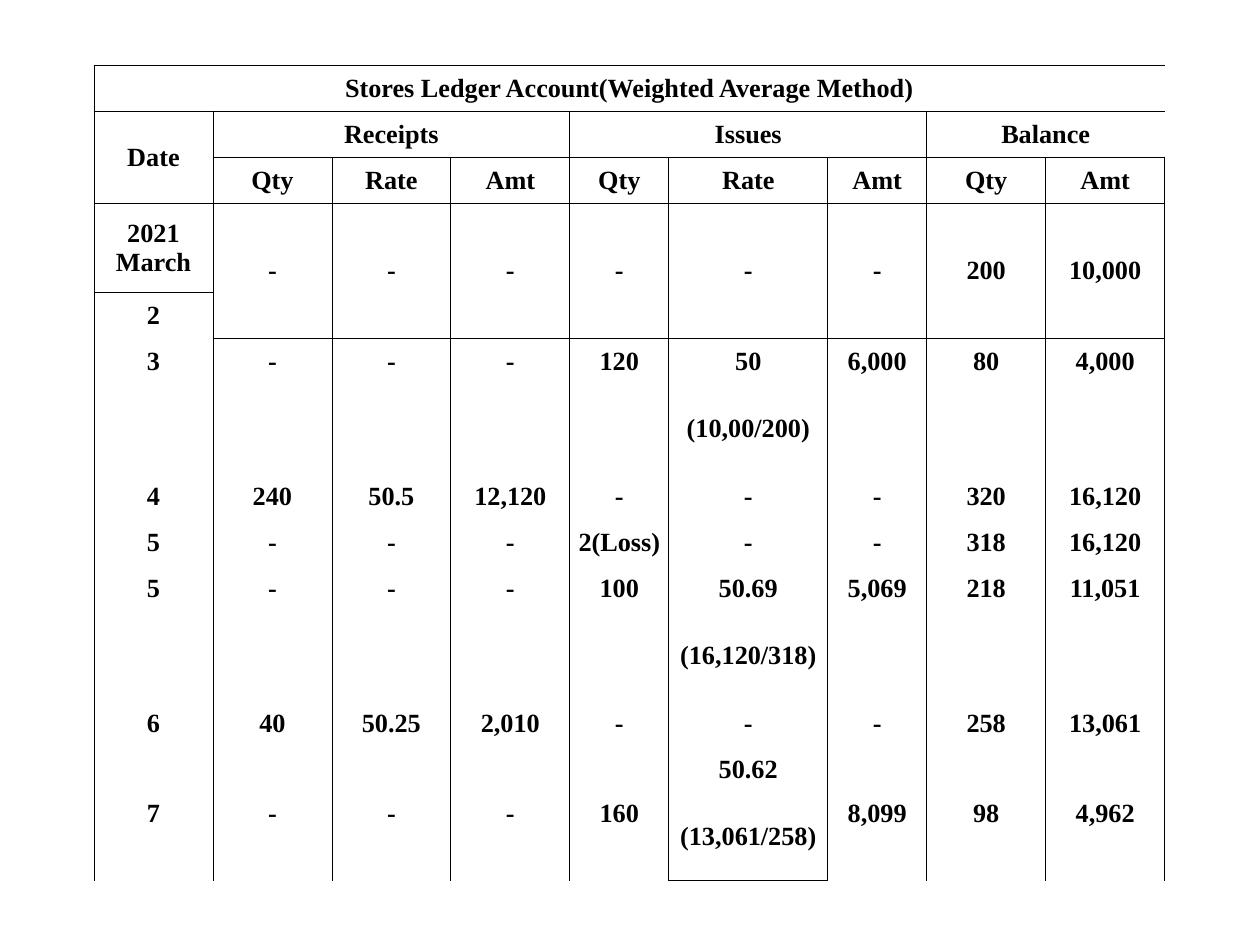
from lxml import etree
from pptx import Presentation, util as u
from pptx.dml.color import RGBColor
from pptx.enum import text
from pptx.oxml.ns import qn

PX = 914400 // 126
BLACK = "000000"
FONT = "Times New Roman"
NO_STYLE = "{2D5ABB26-0587-4C30-8999-92F81FD0307C}"

# Ledger contents; blank entries are empty or covered by a merged cell
LEDGER = [
    ["Stores Ledger Account(Weighted Average Method)"] + [""] * 8,
    ["Date", "Receipts", "", "", "Issues", "", "", "Balance", ""],
    ["", "Qty", "Rate", "Amt", "Qty", "Rate", "Amt", "Qty", "Amt"],
    ["2021 March", "-", "-", "-", "-", "-", "-", "200", "10,000"],
    ["2"] + [""] * 8,
    ["3", "-", "-", "-", "120", "50", "6,000", "80", "4,000"],
    ["", "", "", "", "", "(10,00/200)", "", "", ""],
    ["4", "240", "50.5", "12,120", "-", "-", "-", "320", "16,120"],
    ["5", "-", "-", "-", "2(Loss)", "-", "-", "318", "16,120"],
    ["5", "-", "-", "-", "100", "50.69", "5,069", "218", "11,051"],
    ["", "", "", "", "", "(16,120/318)", "", "", ""],
    ["6", "40", "50.25", "2,010", "-", "-", "-", "258", "13,061"],
    ["7", "-", "-", "-", "160", "50.62", "8,099", "98", "4,962"],
    ["", "", "", "", "", "(13,061/258)", "", "", ""],
]
HEADER_ROWS = 3
COL_WIDTHS = [119, 119, 119, 119, 99, 159, 99, 119, 119]
TALL_ROWS = {3, 6, 10, 13}
ROW_HEIGHTS = [89 if r in TALL_ROWS else 46 for r in range(len(LEDGER))]

# Merged areas: first row, first column, last row, last column
MERGES = [(0, 0, 0, 8), (1, 0, 2, 0), (1, 1, 1, 3), (1, 4, 1, 6), (1, 7, 1, 8)]
MERGES += [(3, c, 4, c) for c in range(1, 9)]
MERGES += [(12, c, 13, c) for c in range(9) if c != 5]


def px(n):
    return u.Emu(n * PX)


def rgb(color):
    return RGBColor.from_string(color)


def write(cell, words, size=15, bold=True, color=BLACK, font=FONT):
    """Centre the words in the cell."""
    cell.vertical_anchor = text.MSO_ANCHOR.MIDDLE
    cell.margin_left = cell.margin_right = cell.margin_top = u.Inches(0.01)
    cell.margin_bottom = 0
    if not words:
        return
    p = cell.text_frame.paragraphs[0]
    p.alignment = text.PP_ALIGN.CENTER
    r = p.add_run()
    r.text = words
    r.font.size, r.font.bold, r.font.name = u.Pt(size), bold, font
    r.font.color.rgb = rgb(color)


def draw_borders(cell, sides, color=BLACK, width=0.5):
    """Rule the listed sides, given in the order L, R, T, B."""
    tc_pr = cell._tc.get_or_add_tcPr()
    for side in sides:
        ln = etree.SubElement(tc_pr, qn("a:ln" + side), w=str(u.Pt(width)))
        fill = etree.SubElement(ln, qn("a:solidFill"))
        etree.SubElement(fill, qn("a:srgbClr"), val=color)


def ruled_sides(row, col):
    """Sides of a cell on a ruled edge, leaving out edges inside a merge."""
    area = next((m for m in MERGES
                 if m[0] <= row <= m[2] and m[1] <= col <= m[3]),
                (row, col, row, col))
    top, left, bottom, right = area
    edges = {
        "L": col == left,
        "R": col == right,
        "T": row == top and row <= HEADER_ROWS,
        "B": row == bottom and (row < HEADER_ROWS or row == len(LEDGER) - 1),
    }
    return [side for side, ruled in edges.items() if ruled]


def add_ledger(slide, x, y):
    frame = slide.shapes.add_table(len(LEDGER), len(COL_WIDTHS), px(x), px(y),
                                   px(sum(COL_WIDTHS)), px(sum(ROW_HEIGHTS)))
    table = frame.table
    # Plain table: no banding, no built-in style
    table.first_row = table.horz_banding = False
    table._tbl.tblPr.find(qn("a:tableStyleId")).text = NO_STYLE
    for column, width in zip(table.columns, COL_WIDTHS):
        column.width = px(width)
    for row, height in zip(table.rows, ROW_HEIGHTS):
        row.height = px(height)
    for top, left, bottom, right in MERGES:
        table.cell(top, left).merge(table.cell(bottom, right))
    # Text, rules and clear fill of every cell
    for r, entries in enumerate(LEDGER):
        for c, words in enumerate(entries):
            cell = table.cell(r, c)
            write(cell, words)
            draw_borders(cell, ruled_sides(r, c))
            cell.fill.background()


def main():
    prs = Presentation()
    prs.slide_width, prs.slide_height = px(1260), px(945)
    slide = prs.slides.add_slide(prs.slide_layouts[6])
    add_ledger(slide, 94, 65)
    prs.save("out.pptx")


if __name__ == "__main__":
    main()
